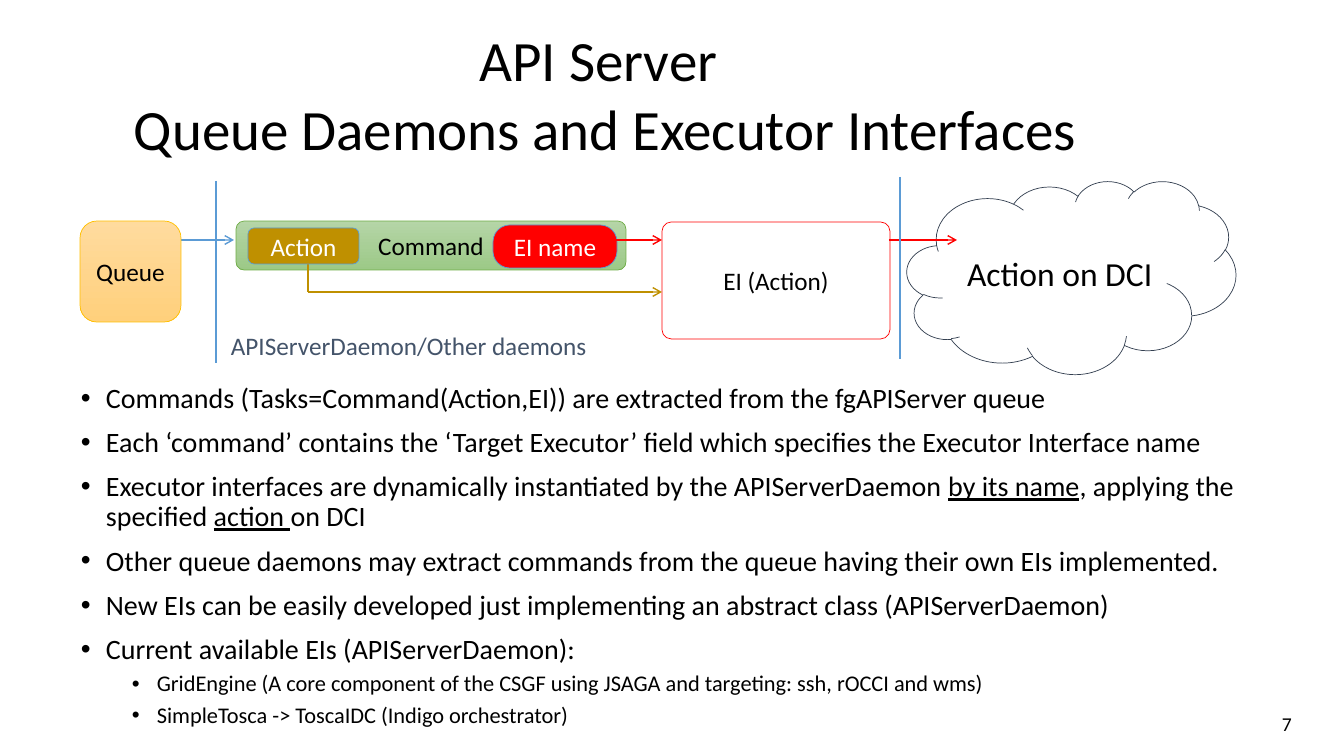
import pptx
import pptx.util
import pptx.dml.color
import pptx.enum.shapes
import pptx.enum.text
import pptx.oxml
import pptx.oxml.ns

COLORS = {
    "black": "000000", "white": "FFFFFF", "red": "FF0000", "blue": "5B9BD5",
    "slate": "44546A", "navy": "333F50", "gold": "BF9000", "amber": "FFC000",
    "amber_light": "FFDB9E", "amber_deep": "FFD07C",
    "green": "70AD47", "green_light": "B5D5A7", "green_deep": "9CC987",
}
TITLE = ["API Server ", "Queue Daemons and Executor Interfaces"]
BULLETS = [
    (0, ["Commands (Tasks=Command(Action,EI)) are extracted from the fgAPIServer queue"]),
    (0, ["Each ‘command’ contains the ‘Target Executor’ field which specifies the Executor Interface name"]),
    (0, ["Executor interfaces are dynamically instantiated by the APIServerDaemon ", "by its name",
         ", applying the specified ", "action ", "on DCI"]),
    (0, ["Other queue daemons may extract commands from the queue having their own EIs implemented."]),
    (0, ["New EIs can be easily developed just implementing an abstract class (APIServerDaemon)"]),
    (0, ["Current available EIs (APIServerDaemon):"]),
    (1, ["GridEngine (A core component of the CSGF using JSAGA and targeting: ssh, rOCCI and wms)"]),
    (1, ["SimpleTosca -> ToscaIDC (Indigo orchestrator)"]),
]
LEVELS = [dict(size=20, before=10, indent=25), dict(size=16, before=5, indent=76)]
HANGING = 25

CLOUD = ("Action on DCI", "CLOUD", (907, 181, 329, 193), ["white"], "navy", dict(size=24))
QUEUE = ("Queue", "ROUNDED_RECTANGLE", (80, 221, 101, 101), ["amber_light", "amber_deep"], "amber", {})
COMMAND = ("Command", "ROUNDED_RECTANGLE", (236, 221, 390, 49), ["green_light", "green_deep"], "green", {})
EI_NAME = ("EI name", "ROUNDED_RECTANGLE", (493, 225, 124, 43), ["red"], "blue",
           dict(color="white", corner=0.39))
EXECUTOR = ("EI (Action)", "ROUNDED_RECTANGLE", (662, 222, 228, 117), [], "red", dict(corner=0.08))
ACTION = ("Action", "ROUNDED_RECTANGLE", (248, 228, 111, 36), ["gold"], "blue", dict(color="white"))

FLOW_Y, ACTION_Y, ACTION_X = 240, 292, 308
QUEUE_ARROW = ((88, FLOW_Y), (234, FLOW_Y), "blue", True)
NAME_ARROW = ((584, FLOW_Y), (662, FLOW_Y), "red", True)
DCI_ARROW = ((889, FLOW_Y), (957, FLOW_Y), "red", True)
ACTION_ARROW = ((ACTION_X, ACTION_Y), (662, ACTION_Y), "gold", True)
ACTION_STEM = ((ACTION_X, ACTION_Y), (ACTION_X, FLOW_Y), "gold", True)
LEFT_BORDER = ((216, 181), (216, 363), "blue", False)
RIGHT_BORDER = ((900, 177), (900, 359), "blue", False)
DIAGRAM = [CLOUD, QUEUE_ARROW, QUEUE, COMMAND, EI_NAME, NAME_ARROW, EXECUTOR, DCI_ARROW,
           ACTION_ARROW, ACTION_STEM, ACTION, LEFT_BORDER, RIGHT_BORDER]


def px(length):
    return pptx.util.Emu(round(length * 914400 / 100.8))


def rgb(name):
    return pptx.dml.color.RGBColor.from_string(COLORS[name])


def add_element(parent, tag, **attributes):
    element = pptx.oxml.parse_xml(f"<a:{tag} {pptx.oxml.ns.nsdecls('a')}/>")
    for key, value in attributes.items():
        element.set(key, str(value))
    parent.append(element)


def write(para, spans, size=18, color="black", align="LEFT"):
    para.alignment = pptx.enum.text.PP_ALIGN[align]
    for index, text in enumerate(spans):
        span = para.add_run()
        span.text = text
        span.font.name = "Calibri"
        span.font.size = pptx.util.Pt(size)
        span.font.color.rgb = rgb(color)
        if index % 2:
            span.font.underline = True


def add_text(page, place, lines, anchor="TOP", **style):
    frame = page.shapes.add_textbox(*map(px, place)).text_frame
    frame.word_wrap = True
    frame.vertical_anchor = pptx.enum.text.MSO_ANCHOR[anchor]
    for index, text in enumerate(lines):
        para = frame.add_paragraph() if index else frame.paragraphs[0]
        write(para, [text], **style)


def add_bullets(page, place):
    frame = page.shapes.add_textbox(*map(px, place)).text_frame
    frame.word_wrap = True
    for index, (level, spans) in enumerate(BULLETS):
        rule = LEVELS[level]
        para = frame.add_paragraph() if index else frame.paragraphs[0]
        para.level = level
        para.line_spacing = 0.9
        para.space_before = pptx.util.Pt(rule["before"] if index else 0)
        properties = para._p.get_or_add_pPr()
        properties.set("marL", str(px(rule["indent"])))
        properties.set("indent", str(px(-HANGING)))
        add_element(properties, "buFont", typeface="Arial")
        add_element(properties, "buChar", char="•")
        write(para, spans, size=rule["size"])


def add_block(page, text, kind, place, fills, outline, style):
    block = page.shapes.add_shape(pptx.enum.shapes.MSO_SHAPE[kind], *map(px, place))
    block.shadow.inherit = False
    if "corner" in style:
        block.adjustments[0] = style["corner"]
    if len(fills) == 2:
        block.fill.gradient()
        block.fill.gradient_angle = 270
        for stop, name in zip(block.fill.gradient_stops, fills):
            stop.color.rgb = rgb(name)
    elif fills:
        block.fill.solid()
        block.fill.fore_color.rgb = rgb(fills[0])
    else:
        block.fill.background()
    block.line.color.rgb = rgb(outline)
    block.line.width = pptx.util.Pt(0.5)
    block.text_frame.vertical_anchor = pptx.enum.text.MSO_ANCHOR.MIDDLE
    write(block.text_frame.paragraphs[0], [text], size=style.get("size", 18),
          color=style.get("color", "black"), align="CENTER")


def add_line(page, start, end, color, arrow):
    line = page.shapes.add_connector(pptx.enum.shapes.MSO_CONNECTOR.STRAIGHT,
                                     *map(px, start + end))
    line.line.color.rgb = rgb(color)
    line.line.width = pptx.util.Pt(1)
    if arrow:
        add_element(line.line._get_or_add_ln(), "tailEnd", type="arrow")
    add_element(line._element.spPr, "effectLst")


def main():
    deck = pptx.Presentation()
    deck.slide_width, deck.slide_height = px(1344), px(756)
    page = deck.slides.add_slide(deck.slide_layouts[6])
    for part in DIAGRAM:
        draw = add_line if len(part) == 4 else add_block
        draw(page, *part)
    add_text(page, (0, 30, 1210, 126), TITLE, anchor="MIDDLE", size=40.7, align="CENTER")
    add_text(page, (221, 325, 380, 40), ["APIServerDaemon/Other daemons"], color="slate")
    add_bullets(page, (71, 379, 1210, 328))
    add_text(page, (1272, 707, 30, 34), ["7"], size=14)
    deck.save("out.pptx")


if __name__ == "__main__":
    main()
